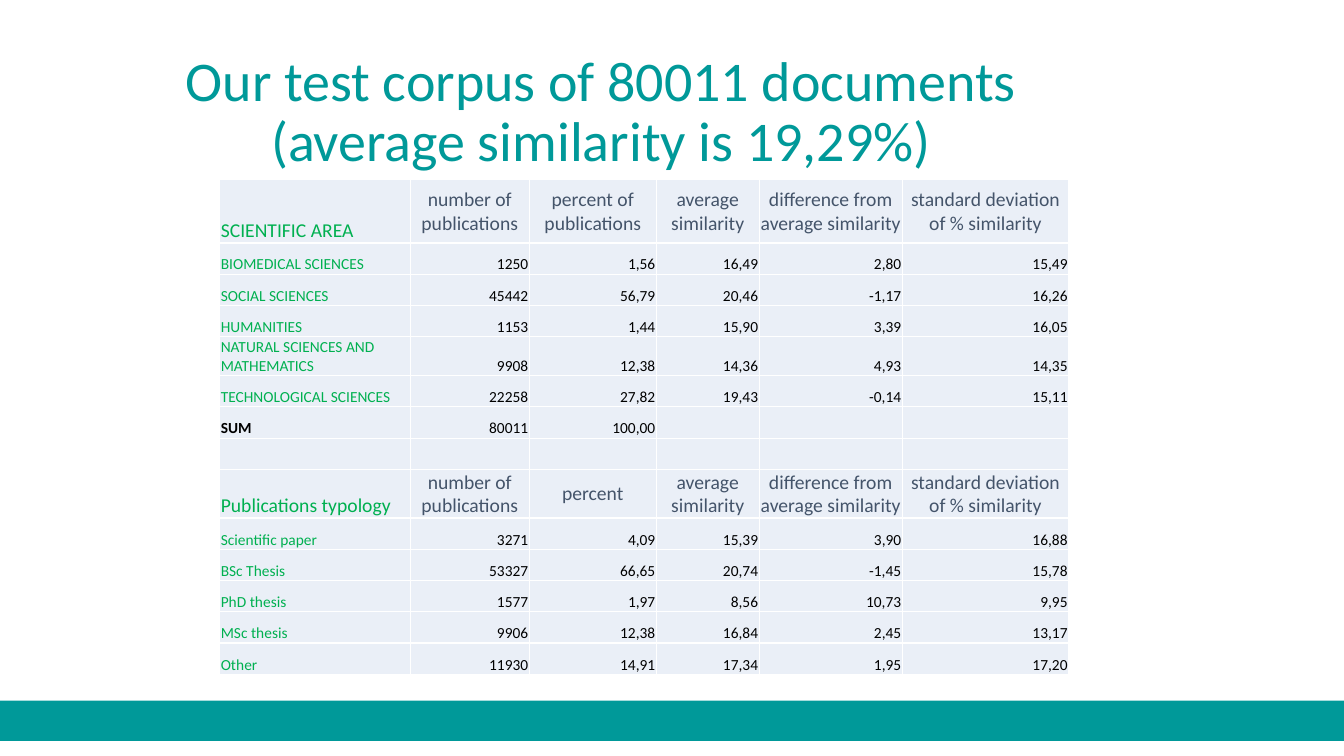
from lxml.etree import SubElement
from pptx import Presentation
from pptx.dml.color import RGBColor
from pptx.enum.shapes import MSO_SHAPE
from pptx.enum.text import MSO_ANCHOR, MSO_AUTO_SIZE, PP_ALIGN
from pptx.oxml.ns import qn
from pptx.util import Pt

SCALE = 9144
FONT = "Calibri"
TEAL, GREEN, SLATE, BLACK = "009999", "00B050", "44546A", "000000"
PALE, WHITE = "EAEFF7", "FFFFFF"
WIDTHS = [189, 118, 126, 102, 142, 165]
TALL = {0: 63, 8: 47}
ROW = 31
HEADS = ["average similarity", "difference from average similarity",
         "standard deviation of % similarity"]
ROWS = [
    ["SCIENTIFIC AREA", "number of publications", "percent of publications", *HEADS],
    ["BIOMEDICAL SCIENCES", "1250", "1,56", "16,49", "2,80", "15,49"],
    ["SOCIAL SCIENCES", "45442", "56,79", "20,46", "-1,17", "16,26"],
    ["HUMANITIES", "1153", "1,44", "15,90", "3,39", "16,05"],
    ["NATURAL SCIENCES AND MATHEMATICS", "9908", "12,38", "14,36", "4,93", "14,35"],
    ["TECHNOLOGICAL SCIENCES", "22258", "27,82", "19,43", "-0,14", "15,11"],
    ["SUM", "80011", "100,00", "", "", ""],
    [""] * 6,
    ["Publications typology", "number of publications", "percent", *HEADS],
    ["Scientific paper", "3271", "4,09", "15,39", "3,90", "16,88"],
    ["BSc Thesis", "53327", "66,65", "20,74", "-1,45", "15,78"],
    ["PhD thesis", "1577", "1,97", "8,56", "10,73", "9,95"],
    ["MSc thesis", "9906", "12,38", "16,84", "2,45", "13,17"],
    ["Other", "11930", "14,91", "17,34", "1,95", "17,20"],
]


def px(count):
    """Turn a length in px into EMU."""
    return count * SCALE


def color(code):
    """Turn a hex string into a colour."""
    return RGBColor.from_string(code)


def add_run(para, text, size, code, bold=False):
    """Add one styled run to a paragraph."""
    run = para.add_run()
    run.text = text
    run.font.name = FONT
    run.font.size = Pt(size)
    run.font.bold = bold
    run.font.color.rgb = color(code)


def add_title(slide, text):
    """Place and fill the title placeholder."""
    title = slide.shapes.title
    title.left, title.top, title.width, title.height = map(px, (92, 40, 1008, 145))
    frame = title.text_frame
    frame.word_wrap = True
    frame.auto_size = MSO_AUTO_SIZE.NONE
    frame.vertical_anchor = MSO_ANCHOR.MIDDLE
    para = frame.paragraphs[0]
    para.alignment = PP_ALIGN.CENTER
    para.line_spacing = 0.9
    add_run(para, text, 40, TEAL)


def add_bar(slide):
    """Draw the band at the foot of the slide."""
    bar = slide.shapes.add_shape(MSO_SHAPE.RECTANGLE, 0, px(695), px(1333), px(40))
    bar.shadow.inherit = False
    bar.fill.solid()
    bar.fill.fore_color.rgb = color(TEAL)
    bar.line.fill.background()


def style_cell(cell):
    """Set the borders, fill and margins of a cell."""
    props = cell._tc.get_or_add_tcPr()
    for side in ("a:lnL", "a:lnR", "a:lnT", "a:lnB"):
        line = SubElement(props, qn(side), w=str(Pt(1)))
        fill = SubElement(line, qn("a:solidFill"))
        SubElement(fill, qn("a:srgbClr"), val=WHITE)
    cell.fill.solid()
    cell.fill.fore_color.rgb = color(PALE)
    cell.margin_left = cell.margin_right = cell.margin_top = px(1)
    cell.margin_bottom = 0


def fill_cell(cell, text, head, first):
    """Write the text of a cell by its role."""
    para = cell.text_frame.paragraphs[0]
    middle = head and not first
    cell.vertical_anchor = MSO_ANCHOR.MIDDLE if middle else MSO_ANCHOR.BOTTOM
    if not text:
        SubElement(para._p, qn("a:endParaRPr"), sz="1100")
        return
    total = text == "SUM"
    if first:
        para.alignment = PP_ALIGN.LEFT
        code = BLACK if total else GREEN
    else:
        para.alignment = PP_ALIGN.CENTER if head else PP_ALIGN.RIGHT
        code = SLATE if head else BLACK
    add_run(para, text, 14 if head else 11, code, total)


def add_grid(slide):
    """Build the table of both groupings."""
    high = [TALL.get(i, ROW) for i in range(len(ROWS))]
    table = slide.shapes.add_table(len(ROWS), len(WIDTHS), px(218), px(178),
                                   px(sum(WIDTHS)), px(sum(high))).table
    table.first_row = table.horz_banding = False
    for col, width in zip(table.columns, WIDTHS):
        col.width = px(width)
    for r, texts in enumerate(ROWS):
        table.rows[r].height = px(high[r])
        for c, text in enumerate(texts):
            cell = table.cell(r, c)
            style_cell(cell)
            fill_cell(cell, text, r in TALL, c == 0)


def main():
    """Build and save the slide."""
    deck = Presentation()
    deck.slide_width, deck.slide_height = px(1333), px(750)
    slide = deck.slides.add_slide(deck.slide_layouts[5])
    add_bar(slide)
    add_title(slide, "Our test corpus of 80011 documents (average similarity is 19,29%)")
    add_grid(slide)
    deck.save("out.pptx")


if __name__ == "__main__":
    main()
